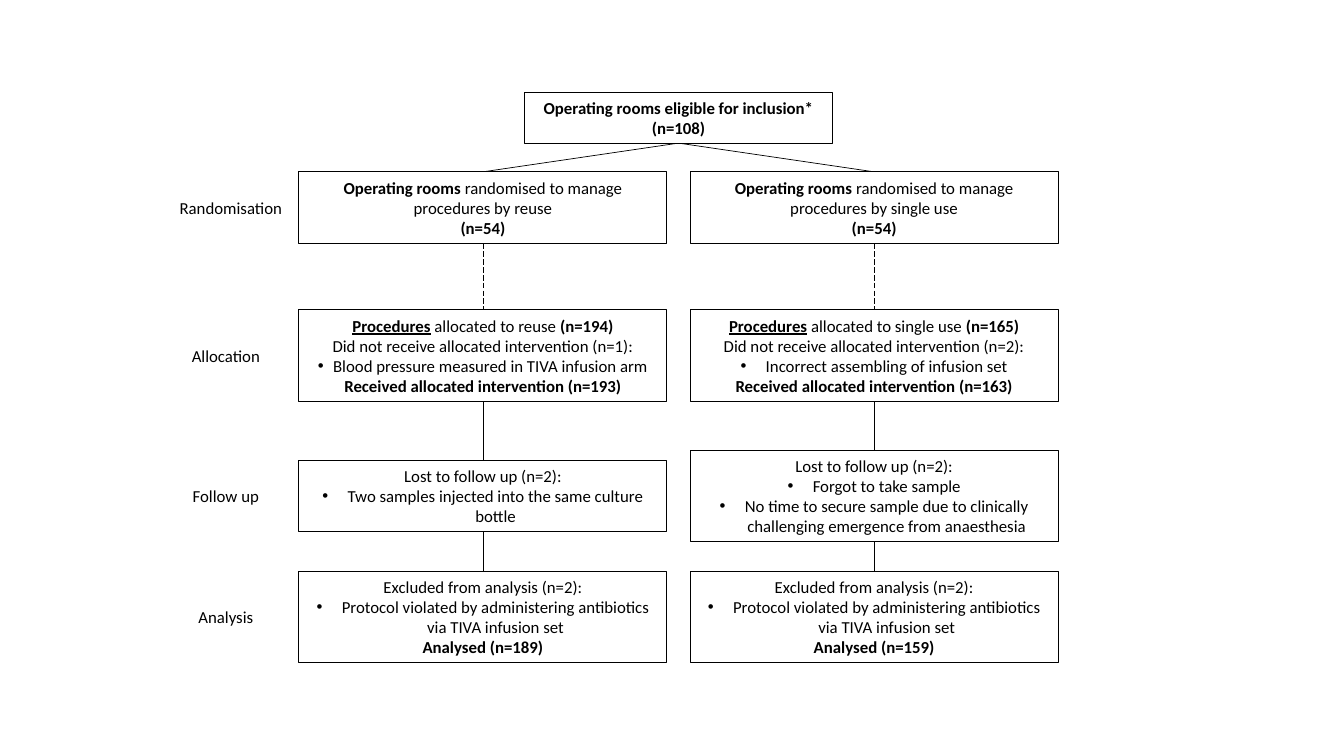
from lxml import etree
from pptx import Presentation, util as u
from pptx.dml.color import RGBColor
from pptx.enum import dml, shapes, text
from pptx.oxml.ns import qn

BLACK, WHITE = "000000", "FFFFFF"
REUSE_X, SINGLE_X = 4.79, 8.67  # centres of the two arms
BOX_WIDTH = 3.65
HEIGHTS = {1: 0.3, 2: 0.5, 3: 0.71, 4: 0.91}  # box height by number of lines

presentation = Presentation()
presentation.slide_width, presentation.slide_height = u.Inches(13.33), u.Inches(7.5)
slide = presentation.slides.add_slide(presentation.slide_layouts[6])


def color(hex_string):
    return RGBColor.from_string(hex_string)


def write(shape, lines, wrap=True):
    """Each line is (bullet indent, runs); each run is (style, text)."""
    frame = shape.text_frame
    frame.word_wrap = wrap
    frame.auto_size = text.MSO_AUTO_SIZE.SHAPE_TO_FIT_TEXT
    frame.vertical_anchor = text.MSO_ANCHOR.MIDDLE
    for index, (indent, runs) in enumerate(lines):
        paragraph = frame.add_paragraph() if index else frame.paragraphs[0]
        paragraph.alignment = text.PP_ALIGN.CENTER
        if indent:
            properties = paragraph._p.get_or_add_pPr()
            properties.set("marL", str(u.Inches(indent)))
            properties.set("indent", str(-u.Inches(indent)))
            etree.SubElement(properties, qn("a:buFont")).set("typeface", "Arial")
            etree.SubElement(properties, qn("a:buChar")).set("char", "•")
        for style, words in runs:
            run = paragraph.add_run()
            run.text = words
            run.font.name, run.font.size = "Calibri", u.Pt(12)
            run.font.color.rgb = color(BLACK)
            run.font.bold = "b" in style
            run.font.underline = "u" in style


# Flow chart: row label, label centre, row centre, then line count and text per arm
eligible = (6.73, 1.17, 3.05, 2, [
    (0, [("b", "Operating rooms eligible for inclusion*")]),
    (0, [("b", "(n=108)")]),
])
excluded = [
    (0, [("", "Excluded from analysis (n=2):")]),
    (0.25, [("", "Protocol violated by administering antibiotics via TIVA infusion set")]),
]
stages = [
    ("Randomisation", 2.29, 2.06, [
        (3, [(0, [("b", "Operating rooms "), ("", f"randomised to manage procedures by {use}")]),
             (0, [("b", "(n=54)")])])
        for use in ("reuse", "single use")]),
    ("Allocation", 2.24, 3.53, [
        (4, [(0, [("bu", "Procedures"), ("", f" allocated to {use} "), ("b", f"(n={allocated})")]),
             (0, [("", f"Did not receive allocated intervention (n={missed}):")]),
             (indent, [("", reason)]),
             (0, [("b", f"Received allocated intervention (n={allocated - missed})")])])
        for use, allocated, missed, indent, reason in (
            ("reuse", 194, 1, 0.15, "Blood pressure measured in TIVA infusion arm"),
            ("single use", 165, 2, 0.25, "Incorrect assembling of infusion set"))]),
    ("Follow up", 2.24, 4.92, [
        (count, [(0, [("", "Lost to follow up (n=2):")])]
         + [(0.25, [("", reason)]) for reason in reasons])
        for count, reasons in (
            (3, ["Two samples injected into the same culture bottle"]),
            (4, ["Forgot to take sample",
                 "No time to secure sample due to clinically challenging "
                 "emergence from anaesthesia"]))]),
    ("Analysis", 2.24, 6.12, [
        (4, excluded + [(0, [("b", f"Analysed (n={analysed})")])])
        for analysed in (189, 159)]),
]

# Boxes and the links between them
boxes = [eligible]
links = []
for arm, center_x in enumerate((REUSE_X, SINGLE_X)):
    start_x, start_y = eligible[0], eligible[1] + HEIGHTS[2] / 2
    for label, label_x, center_y, arms in stages:
        count, lines = arms[arm]
        half = HEIGHTS[count] / 2
        boxes.append((center_x, center_y, BOX_WIDTH, count, lines))
        links.append((start_x, start_y, center_x, center_y - half, label == "Allocation"))
        start_x, start_y = center_x, center_y + half

for start_x, start_y, end_x, end_y, dashed in links:
    link = slide.shapes.add_connector(
        shapes.MSO_CONNECTOR.STRAIGHT, *map(u.Inches, (start_x, start_y, end_x, end_y)))
    link.line.color.rgb = color(BLACK)
    link.line.width = u.Pt(0.5)
    if dashed:
        link.line.dash_style = dml.MSO_LINE.LONG_DASH
    etree.SubElement(link._element.spPr, qn("a:effectLst"))

for center_x, center_y, width, count, lines in boxes:
    height = HEIGHTS[count]
    box = slide.shapes.add_shape(
        shapes.MSO_SHAPE.RECTANGLE,
        *map(u.Inches, (center_x - width / 2, center_y - height / 2, width, height)))
    box.shadow.inherit = False
    box.fill.solid()
    box.fill.fore_color.rgb = color(WHITE)
    box.line.color.rgb = color(BLACK)
    box.line.width = u.Pt(0.75)
    write(box, lines)

# Stage labels on the left
for label, label_x, center_y, arms in stages:
    width, height = 1.23 if label == "Randomisation" else 0.88, HEIGHTS[1]
    caption = slide.shapes.add_textbox(
        *map(u.Inches, (label_x - width / 2, center_y - height / 2, width, height)))
    write(caption, [(0, [("", label)])], wrap=False)

presentation.save("out.pptx")
